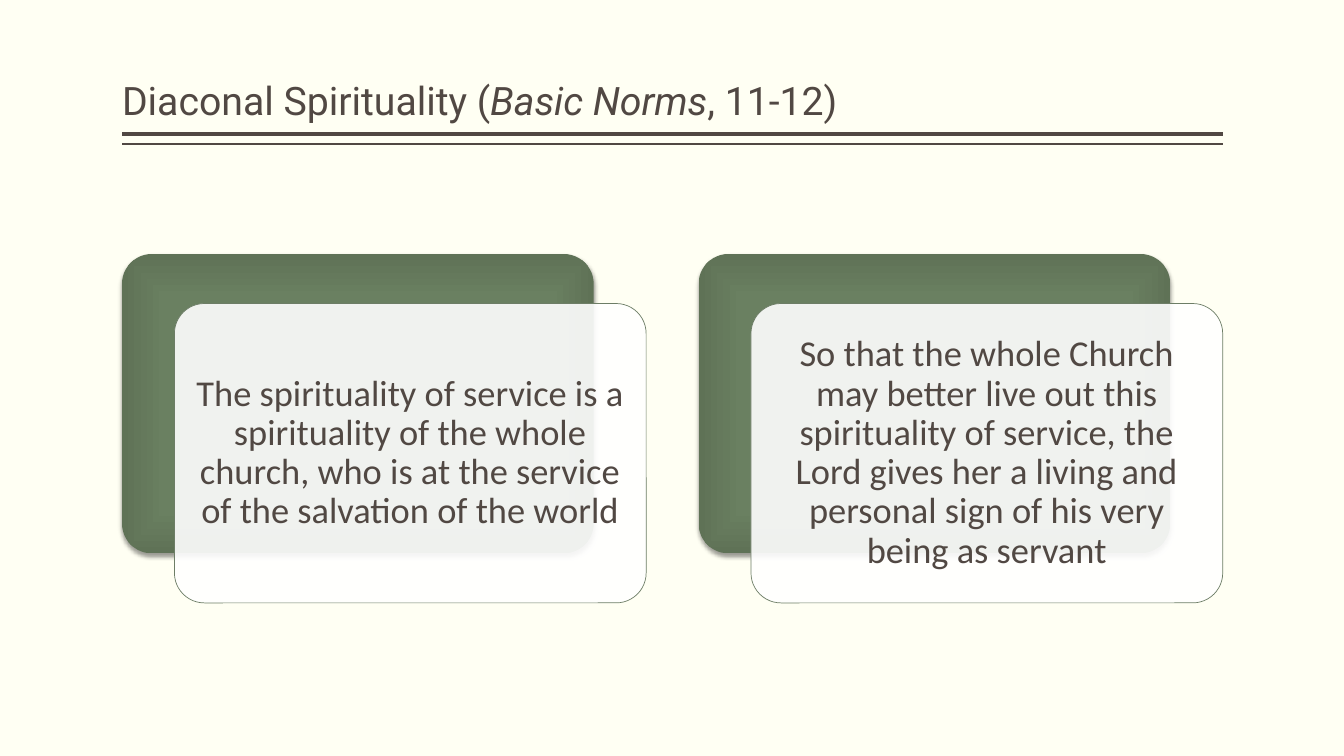
from lxml.etree import SubElement
from pptx import Presentation
from pptx.dml.color import RGBColor
from pptx.enum.shapes import MSO_CONNECTOR as Connector, MSO_SHAPE as Shape
from pptx.enum.text import MSO_ANCHOR as Anchor, MSO_AUTO_SIZE as AutoSize, PP_ALIGN as Align
from pptx.oxml import parse_xml
from pptx.oxml.ns import nsdecls, qn
from pptx.util import Inches, Pt

CREAM = RGBColor(0xFF, 0xFF, 0xF3)
BROWN = RGBColor(0x51, 0x48, 0x43)
WHITE = RGBColor(0xFF, 0xFF, 0xFF)
SAGE = RGBColor(0x6D, 0x7D, 0x66)
GREEN_STOPS = [
    (0, RGBColor(0x6B, 0x81, 0x62)),
    (71, RGBColor(0x6A, 0x80, 0x61)),
    (100, RGBColor(0x5F, 0x72, 0x56)),
]

# Horizontal and vertical places, in percent of the slide's size
LEFT, WIDTH = 9.08, 81.9
CARD_TOP, CARD_WIDTH, CARD_HEIGHT = 33.6, 35.1, 39.6
CARD_PITCH, SHIFT_X, SHIFT_Y = 42.9, 3.9, 6.55

HEADING = [("Diaconal Spirituality (", False), ("Basic Norms", True), (", 11-12)", False)]
STATEMENTS = [
    "The spirituality of service is a spirituality of the whole church, "
    "who is at the service of the salvation of the world",
    "So that the whole Church may better live out this spirituality of service, "
    "the Lord gives her a living and personal sign of his very being as servant",
]


def write(frame, runs, font, size, align, anchor, insets, color=BROWN, space_after=0):
    """Fill a text frame with one paragraph of (text, italic) runs."""
    frame.word_wrap = True
    frame.auto_size = AutoSize.NONE
    frame.vertical_anchor = anchor
    side, end = insets
    frame.margin_left = frame.margin_right = Inches(side)
    frame.margin_top = frame.margin_bottom = Inches(end)
    paragraph = frame.paragraphs[0]
    paragraph.alignment = align
    paragraph.line_spacing = 0.9
    paragraph.space_after = Pt(space_after)
    for text, italic in runs:
        run = paragraph.add_run()
        run.text = text
        run.font.name, run.font.size = font, Pt(size)
        run.font.italic = italic
        run.font.color.rgb = color


class SlideBuilder:
    heading_font, body_font = "Roboto", "Calibri"
    heading_size, body_size = 28, 26

    def __init__(self, deck):
        self.deck = deck
        self.slide = deck.slides.add_slide(deck.slide_layouts[5])
        self.slide.background.fill.solid()
        self.slide.background.fill.fore_color.rgb = CREAM

    def x(self, percent):
        return round(self.deck.slide_width * percent / 100)

    def y(self, percent):
        return round(self.deck.slide_height * percent / 100)

    def box(self, left, top, width, height):
        return self.x(left), self.y(top), self.x(width), self.y(height)

    def title(self, runs, left, top, width, height):
        heading = self.slide.shapes.title
        heading.left, heading.top, heading.width, heading.height = self.box(left, top, width, height)
        write(heading.text_frame, runs, self.heading_font, self.heading_size,
              Align.LEFT, Anchor.BOTTOM, (0, 0.05))

    def rule(self, left, top, width, weight):
        start, level = self.x(left), self.y(top)
        rule = self.slide.shapes.add_connector(
            Connector.STRAIGHT, start, level, start + self.x(width), level)
        rule.line.color.rgb = BROWN
        rule.line.width = Pt(weight)
        SubElement(rule._element.spPr, qn("a:effectLst"))

    def rounded(self, left, top):
        panel = self.slide.shapes.add_shape(
            Shape.ROUNDED_RECTANGLE, *self.box(left, top, CARD_WIDTH, CARD_HEIGHT))
        panel.adjustments[0] = 0.1
        panel.shadow.inherit = False
        return panel

    def backing(self, left, top):
        backing = self.rounded(left, top)
        backing.line.fill.background()
        backing.fill.background()
        properties = backing._element.spPr
        stops = "".join(f'<a:gs pos="{place * 1000}"><a:srgbClr val="{color}"/></a:gs>'
                        for place, color in GREEN_STOPS)
        gradient = parse_xml(
            f'<a:gradFill {nsdecls("a")} rotWithShape="1"><a:gsLst>{stops}</a:gsLst>'
            '<a:path path="rect"><a:fillToRect l="50000" t="50000" r="50000" b="50000"/>'
            '</a:path></a:gradFill>')
        properties.replace(properties.find(qn("a:noFill")), gradient)
        properties.find(qn("a:effectLst")).append(parse_xml(
            f'<a:outerShdw {nsdecls("a")} blurRad="{Pt(3.1)}" dist="{Pt(2)}" dir="5400000" '
            'rotWithShape="0"><a:srgbClr val="000000"><a:alpha val="38000"/></a:srgbClr>'
            '</a:outerShdw>'))

    def card(self, statement, left, top):
        card = self.rounded(left, top)
        card.fill.solid()
        card.fill.fore_color.rgb = WHITE
        tint = card._element.spPr.find(qn("a:solidFill")).find(qn("a:srgbClr"))
        SubElement(tint, qn("a:alpha"), val="90000")
        card.line.color.rgb = SAGE
        card.line.width = Pt(0.5)
        write(card.text_frame, [(statement, False)], self.body_font, self.body_size,
              Align.CENTER, Anchor.MIDDLE, (0.11, 0.11), space_after=9)


def main():
    deck = Presentation()
    deck.slide_width, deck.slide_height = Inches(13.33), Inches(7.5)
    builder = SlideBuilder(deck)

    # Heading with its double rule
    builder.title(HEADING, LEFT, 1.07, WIDTH, 16)
    for level, weight in [(17.73, 3), (19.07, 1)]:
        builder.rule(LEFT, level, WIDTH, weight)

    # Statement cards, each shifted over a green backing
    for column, statement in enumerate(STATEMENTS):
        left = LEFT + column * CARD_PITCH
        builder.backing(left, CARD_TOP)
        builder.card(statement, left + SHIFT_X, CARD_TOP + SHIFT_Y)

    deck.save("out.pptx")


if __name__ == "__main__":
    main()
